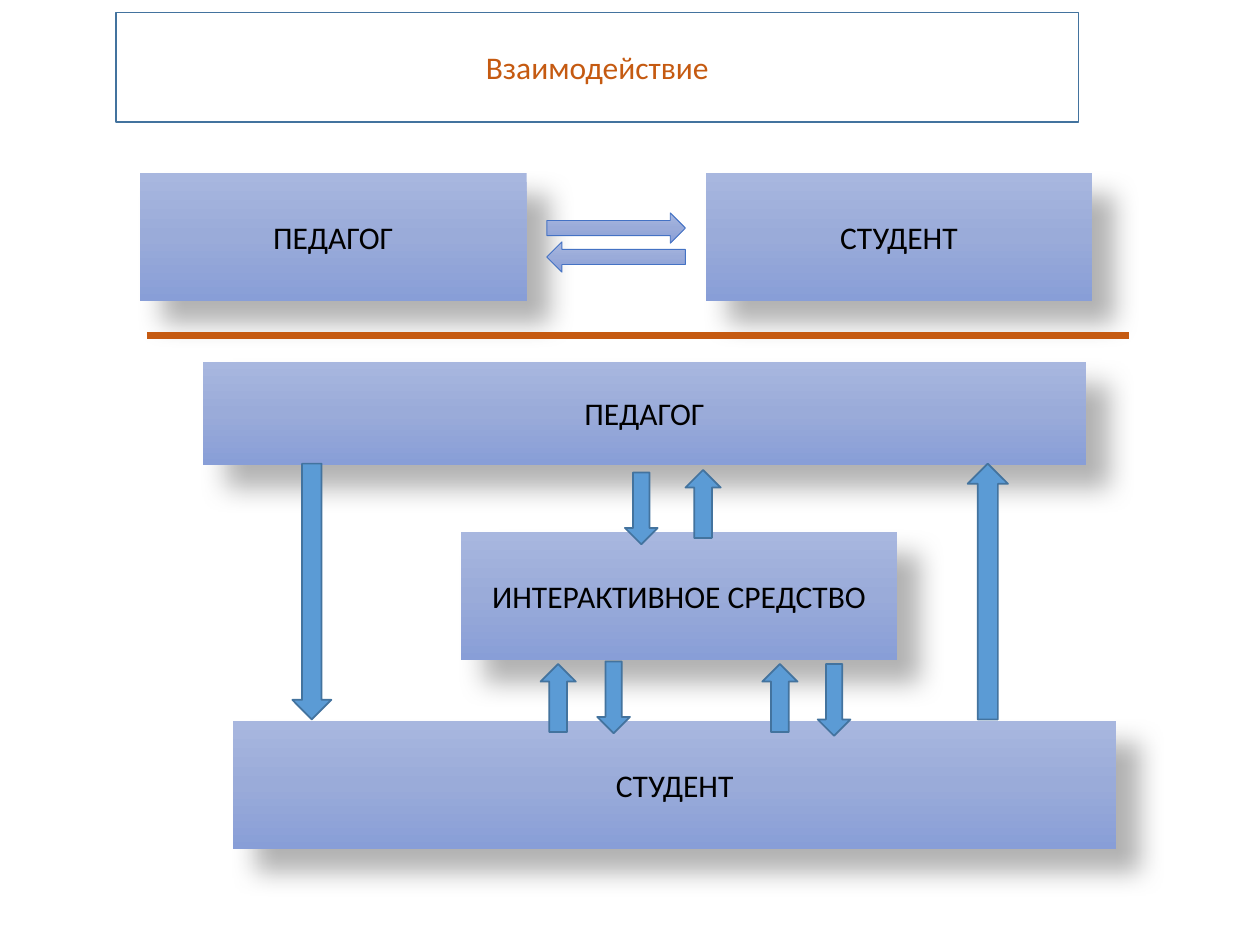
"""Builds the slide on interaction between teacher, student and interactive tool."""
import copy

import pptx
import pptx.dml.color
import pptx.enum.shapes
import pptx.enum.text
import pptx.oxml
import pptx.oxml.ns
import pptx.util
from pptx.util import Inches

SHAPES = pptx.enum.shapes.MSO_SHAPE
FONT = "Calibri"
ORANGE = "C55A11"
GRADIENT = [(0, "A8B7DF"), (0.5, "9AABD9"), (1, "889ED7")]

TITLE = ("Взаимодействие", 0.92, 0.1, 7.64, 0.87)
DIRECT_BOXES = [
    ("ПЕДАГОГ", 1.11, 1.37, 3.07, 1.02),
    ("СТУДЕНТ", 5.6, 1.37, 3.07, 1.02),
]
EXCHANGE_ARROWS = [
    (SHAPES.RIGHT_ARROW, 4.34, 1.69, 1.1, 0.24),
    (SHAPES.LEFT_ARROW, 4.34, 1.92, 1.1, 0.24),
]
DIVIDER = (1.17, 8.96, 2.66)
MEDIATED_BOXES = [
    ("ПЕДАГОГ", 1.61, 2.87, 7.01, 0.82),
    ("ИНТЕРАКТИВНОЕ СРЕДСТВО", 3.66, 4.22, 3.46, 1.02),
    ("СТУДЕНТ", 1.85, 5.72, 7.01, 1.02),
]
FLOW_ARROWS = [
    (SHAPES.DOWN_ARROW, 2.32, 3.68, 0.31, 2.03),
    (SHAPES.UP_ARROW, 7.68, 3.68, 0.32, 2.03),
    (SHAPES.DOWN_ARROW, 4.96, 3.75, 0.26, 0.57),
    (SHAPES.UP_ARROW, 6.05, 5.27, 0.28, 0.54),
    (SHAPES.UP_ARROW, 4.29, 5.27, 0.28, 0.54),
    (SHAPES.UP_ARROW, 5.44, 3.73, 0.28, 0.54),
    (SHAPES.DOWN_ARROW, 4.74, 5.25, 0.26, 0.57),
    (SHAPES.DOWN_ARROW, 6.49, 5.27, 0.26, 0.57),
]
SHADOW = (
    '<a:outerShdw %s blurRad="%d" dist="%d" dir="2700000" algn="tl" rotWithShape="0">'
    '<a:srgbClr val="000000"><a:alpha val="30000"/></a:srgbClr></a:outerShdw>'
    % (pptx.oxml.ns.nsdecls("a"), pptx.util.Pt(15), pptx.util.Pt(18))
)


def color(value):
    return pptx.dml.color.RGBColor.from_string(value)


def add_shape(slide, kind, position, fill=None, line=None, line_width=1):
    shape = slide.shapes.add_shape(kind, *map(Inches, position))
    shape.shadow.inherit = False
    if fill:
        shape.fill.solid()
        shape.fill.fore_color.rgb = color(fill)
    else:
        fill_gradient(shape)
    if line:
        shape.line.color.rgb = color(line)
        shape.line.width = pptx.util.Pt(line_width)
    else:
        shape.line.fill.background()
    return shape


def fill_gradient(shape):
    shape.fill.gradient()
    shape.fill.gradient_angle = 270
    first_stop = shape._element.spPr.find(".//" + pptx.oxml.ns.qn("a:gs"))
    first_stop.addnext(copy.deepcopy(first_stop))
    for stop, (position, value) in zip(shape.fill.gradient_stops, GRADIENT):
        stop.position = position
        stop.color.rgb = color(value)


def write_text(shape, text, text_color):
    frame = shape.text_frame
    frame.word_wrap = True
    frame.vertical_anchor = pptx.enum.text.MSO_ANCHOR.MIDDLE
    paragraph = frame.paragraphs[0]
    paragraph.text = text
    paragraph.alignment = pptx.enum.text.PP_ALIGN.CENTER
    paragraph.font.name = FONT
    paragraph.font.size = pptx.util.Pt(18)
    paragraph.font.color.rgb = color(text_color)


def add_boxes(slide, boxes):
    for text, *position in boxes:
        box = add_shape(slide, SHAPES.RECTANGLE, position)
        effects = box._element.spPr.find(pptx.oxml.ns.qn("a:effectLst"))
        effects.append(pptx.oxml.parse_xml(SHADOW))
        write_text(box, text, "000000")


def add_divider(slide):
    left, right, top = map(Inches, DIVIDER)
    divider = slide.shapes.add_connector(
        pptx.enum.shapes.MSO_CONNECTOR.STRAIGHT, left, top, right, top)
    divider.line.color.rgb = color(ORANGE)
    divider.line.width = pptx.util.Pt(4)
    properties = divider._element.spPr
    properties.append(properties.makeelement(pptx.oxml.ns.qn("a:effectLst")))


def main():
    presentation = pptx.Presentation()
    presentation.slide_width = Inches(10)
    presentation.slide_height = Inches(7.5)
    slide = presentation.slides.add_slide(presentation.slide_layouts[6])

    add_boxes(slide, DIRECT_BOXES)
    for kind, *position in EXCHANGE_ARROWS:
        add_shape(slide, kind, position, line="4472C4", line_width=0.5)
    add_divider(slide)
    add_boxes(slide, MEDIATED_BOXES)
    for kind, *position in FLOW_ARROWS:
        add_shape(slide, kind, position, "5B9BD5", "43739E")
    text, *position = TITLE
    title = add_shape(slide, SHAPES.RECTANGLE, position, "FFFFFF", "43739E")
    write_text(title, text, ORANGE)

    presentation.save("out.pptx")


if __name__ == "__main__":
    main()
